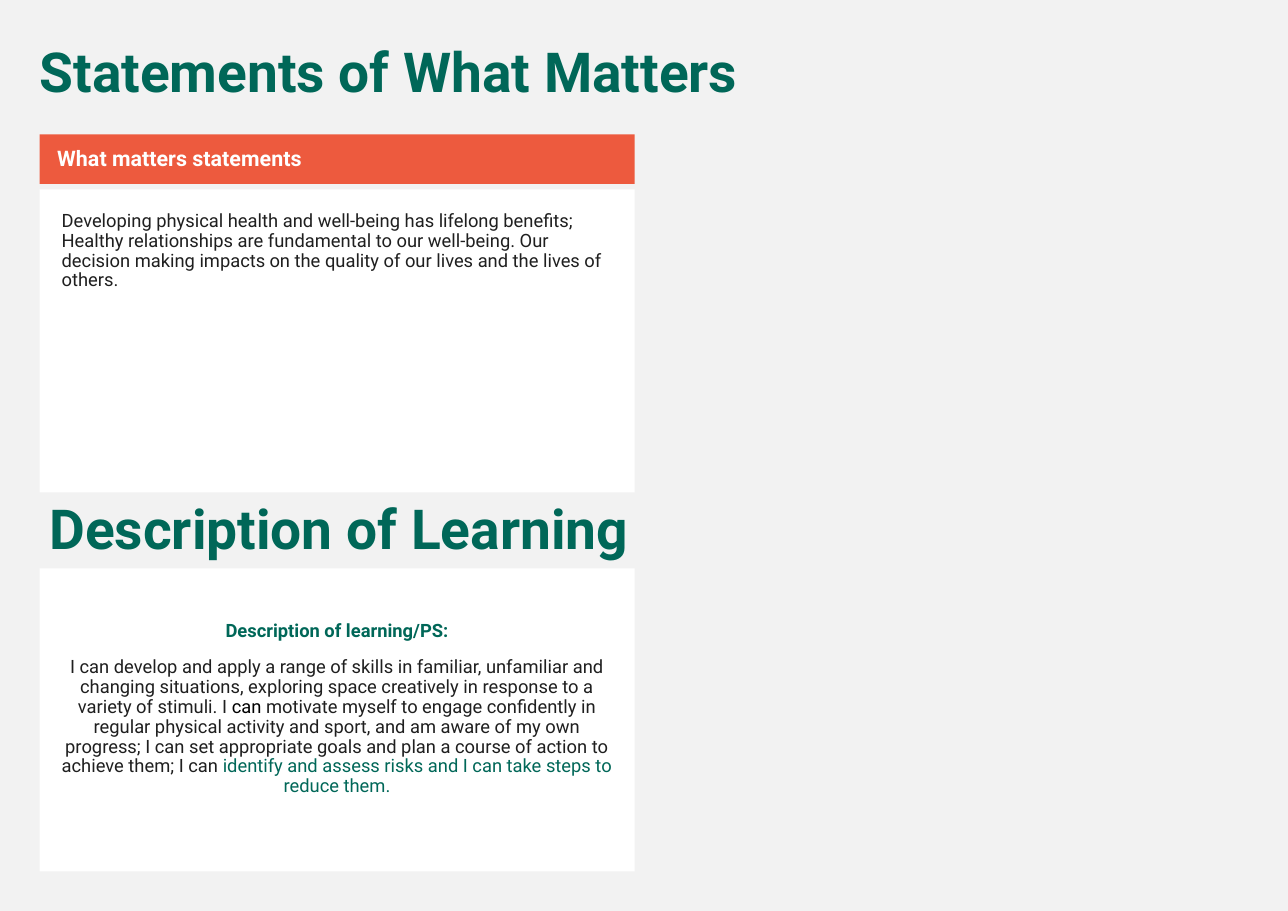
from pptx import Presentation
from pptx.dml.color import RGBColor as Rgb
from pptx.enum.shapes import MSO_SHAPE as Shape
from pptx.enum.text import MSO_ANCHOR as Anchor, MSO_AUTO_SIZE as Fit, PP_ALIGN as Align
from pptx.util import Inches, Pt

# Content: each paragraph is a list of runs (text, size, colour, bold)
HEADS = ["Statements of What Matters", "Description of Learning"]
LABEL = [[("What matters statements", 14, "white", True)]]
MATTERS = [[
    ("Developing physical health and well-being has lifelong benefits; Healthy "
     "relationships are fundamental to our well-being. Our decision making impacts",
     12, "ink", False),
    (" ", 10, "ink", False),
    ("on the quality of our lives and the lives of others.", 12, "ink", False),
]]
LEARN = [
    [("Description of learning/PS:", 12, "green", True)],
    [("I can develop and apply a range of skills in familiar, unfamiliar and changing "
      "situations, exploring space creatively in response to a variety of stimuli. I",
      12, "ink", False),
     (" can ", 12, "black", False),
     ("motivate myself to engage confidently in regular physical activity and sport, "
      "and am aware of my own progress; I can set appropriate goals and plan a course "
      "of action to achieve them; I can", 12, "ink", False),
     (" identify and assess risks and I can take steps to reduce them.",
      12, "green", False)],
]
HUES = {"back": "F2F2F2", "white": "FFFFFF", "orange": "ED5A3E",
        "green": "006758", "ink": "1F1F1F", "black": "000000"}

# Layout in inches
LEFT, WIDE, TALL = 0.36, 5.4, 2.75
HEAD_W, HEAD_H = 11.08, 0.65


def hue(name):
    return Rgb.from_string(HUES[name])


def write(shape, paras, pads, align=Align.LEFT, anchor=Anchor.TOP):
    frame = shape.text_frame
    frame.word_wrap = True
    frame.auto_size = Fit.NONE
    frame.vertical_anchor = anchor
    (frame.margin_left, frame.margin_top,
     frame.margin_right, frame.margin_bottom) = map(Inches, pads)
    for i, runs in enumerate(paras):
        para = frame.add_paragraph() if i else frame.paragraphs[0]
        para.alignment = align
        para.line_spacing = 0.9
        para.space_before = Pt(11)
        for text, size, color, bold in runs:
            run = para.add_run()
            run.text = text
            font = run.font
            font.name, font.size, font.bold = "Roboto", Pt(size), bold
            font.color.rgb = hue(color)


def panel(slide, top, tall, fill, *text):
    box = slide.shapes.add_shape(Shape.RECTANGLE, *map(Inches, (LEFT, top, WIDE, tall)))
    box.shadow.inherit = False
    box.fill.solid()
    box.fill.fore_color.rgb = hue(fill)
    box.line.fill.background()
    write(box, *text)


def main():
    deck = Presentation()
    deck.slide_width, deck.slide_height = Inches(11.69), Inches(8.27)
    slide = deck.slides.add_slide(deck.slide_layouts[5])
    slide.background.fill.solid()
    slide.background.fill.fore_color.rgb = hue("back")

    # Panels
    panel(slide, 1.72, TALL, "white", MATTERS, (0.2, 0.2, 0.2, 0.2))
    panel(slide, 1.22, 0.45, "orange", LABEL, (0.16, 0.05, 0.1, 0.05),
          Align.LEFT, Anchor.MIDDLE)
    panel(slide, 5.16, TALL, "white", LEARN, (0.2, 0.48, 0.2, 0.2), Align.CENTER)

    # Headings
    title = slide.shapes.title
    title.left, title.top, title.width, title.height = map(
        Inches, (0.26, 0.36, HEAD_W, HEAD_H))
    second = slide.shapes.add_textbox(*map(Inches, (0.35, 4.51, HEAD_W, HEAD_H)))
    for shape, text in zip((title, second), HEADS):
        write(shape, [[(text, 36, "green", True)]], (0.1, 0.05, 0.1, 0.05))

    deck.save("out.pptx")


if __name__ == "__main__":
    main()
